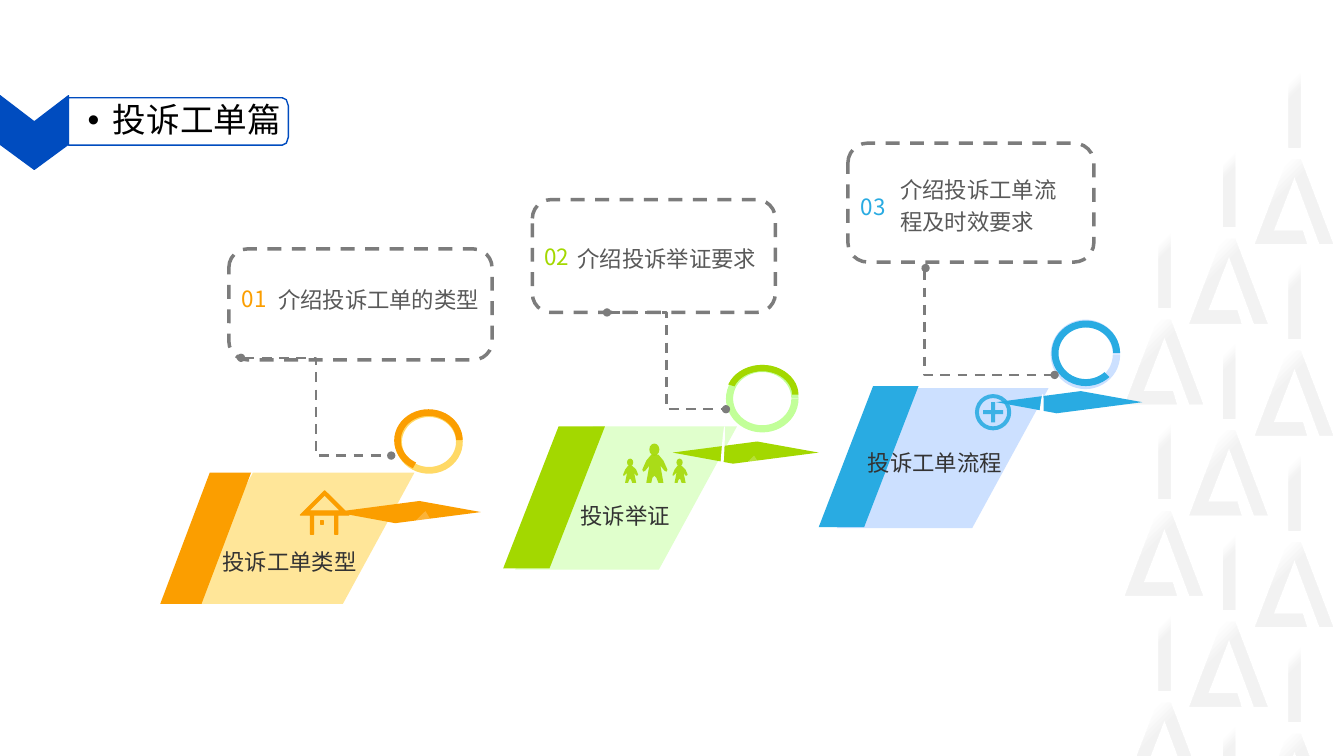
from lxml.etree import SubElement
from pptx import Presentation
from pptx.dml.color import RGBColor
from pptx.enum.dml import MSO_LINE_DASH_STYLE as DASH
from pptx.enum.shapes import MSO_CONNECTOR, MSO_SHAPE as SHAPE
from pptx.enum.text import MSO_ANCHOR
from pptx.oxml.ns import qn
from pptx.util import Pt

PX = 9144
FONT = "Noto Sans CJK SC"
GRAY, NAVY, WHITE = "7C7C7C", "004CBF", "FFFFFF"
ORANGE, GREEN, BLUE = "FB9E00", "A3D800", "29ABE2"
rgb = RGBColor.from_string

presentation = Presentation()
presentation.slide_width = 1333 * PX
presentation.slide_height = 750 * PX
slide = presentation.slides.add_slide(presentation.slide_layouts[6])
shapes = slide.shapes


def paint(shape, color, alpha=100, line=None):
    shape.shadow.inherit = False
    shape.fill.solid()
    shape.fill.fore_color.rgb = rgb(color)
    if alpha < 100:
        tint = shape._element.spPr.find(qn("a:solidFill"))[0]
        SubElement(tint, qn("a:alpha"), val=str(alpha * 1000))
    if line:
        shape.line.color.rgb = rgb(line)
        shape.line.width = Pt(1)
    else:
        shape.line.fill.background()
    return shape


def outline(contours, left=0, top=0, scale=1):
    builder = None
    for contour in contours:
        points = [(left + x * scale, top + y * scale) for x, y in contour]
        if builder is None:
            builder = shapes.build_freeform(*points[0], scale=PX)
        else:
            builder.move_to(*points[0])
        builder.add_line_segments(points[1:], close=True)
    return builder.convert_to_shape()


LETTER = [(45, 0), (32, 0), (0, 84), (51, 84), (47, 71), (18, 71),
          (39, 17), (64, 84), (77, 84)]
for column_left, column_top in [(1116, 222), (1180, 142), (1245, 63)]:
    for row in range(8):
        top = column_top + 95 * row
        if top >= 750:
            continue
        if row % 2:
            motif = outline([LETTER], column_left, top)
        else:
            motif = shapes.add_shape(
                SHAPE.RECTANGLE, (column_left + 33) * PX, top * PX, 12 * PX, 83 * PX)
        motif.shadow.inherit = False
        motif.line.fill.background()
        motif.fill.gradient()
        motif.fill.gradient_angle = 315
        for stop, position, color in zip(
                motif.fill.gradient_stops, (0.2, 0.4), (WHITE, "F2F2F2")):
            stop.position = position
            stop.color.rgb = rgb(color)

DIAMOND = [(0, 0), (84, -11), (145, 0), (60, 11)]
topics = [
    dict(color=ORANGE, pale="FFE699", track="FFD966", number="01",
         caption="介绍投诉工单的类型", label="投诉工单类型",
         tile=(180, 469, 231, 130), strip=(159, 469, 90, 130), diamond=(332, 508),
         ring=(392, 407, 67, 63), arc=(391, 406, 68, 62), start=71.6,
         frame=(227, 247, 261, 110), number_box=(230, 259, 56, 74),
         caption_box=(266, 262, 224, 66), label_box=(211, 534, 189, 46),
         link=(239, 355, 388, 452), bend=0.5),
    dict(color=GREEN, pale="E0FFCC", track="C2FF99", number="02",
         caption="介绍投诉举证要求", label="投诉举证",
         tile=(511, 423, 220, 142), strip=(499, 423, 101, 141), diamond=(667, 449),
         ring=(720, 362, 72, 67), arc=(720, 362, 72, 60), start=118.46,
         frame=(528, 198, 241, 112), number_box=(530, 230, 50, 49),
         caption_box=(563, 224, 218, 59), label_box=(566, 499, 160, 25),
         link=(602, 310, 720, 406), bend=0.5),
    dict(color=BLUE, pale="CCE0FF", track="CCE0FF", number="03",
         caption="介绍投诉工单流程及时效要求", label="投诉工单流程",
         tile=(830, 385, 210, 139), strip=(812, 383, 99, 140), diamond=(988, 399),
         ring=(1042, 317, 69, 69), arc=(1043, 318, 68, 65), start=27.19,
         frame=(841, 142, 244, 118), number_box=(844, 169, 73, 72),
         caption_box=(883, 153, 178, 97), label_box=(851, 440, 164, 38),
         link=(918, 266, 1046, 372), bend=-0.01),
]

for topic in topics:
    for part, color in [("tile", topic["pale"]), ("strip", topic["color"])]:
        slab = shapes.add_shape(SHAPE.PARALLELOGRAM, *[n * PX for n in topic[part]])
        slab.adjustments[0] = 0.545
        paint(slab, color)
    paint(outline([DIAMOND], *topic["diamond"]), topic["color"])
    for part, color, start in [("ring", topic["track"], 0),
                               ("arc", topic["color"], topic["start"])]:
        arc = shapes.add_shape(SHAPE.BLOCK_ARC, *[n * PX for n in topic[part]])
        for index, value in enumerate((start, 215.55, 0.106)):
            arc.adjustments[index] = value
        paint(arc, color)

    frame = shapes.add_shape(SHAPE.ROUNDED_RECTANGLE, *[n * PX for n in topic["frame"]])
    frame.shadow.inherit = False
    frame.fill.background()
    frame.line.color.rgb = rgb(GRAY)
    frame.line.width = Pt(2.5)
    frame.line.dash_style = DASH.DASH

    link = shapes.add_connector(MSO_CONNECTOR.ELBOW, *[n * PX for n in topic["link"]])
    link.line.color.rgb = rgb(GRAY)
    link.line.width = Pt(1.75)
    link.line.dash_style = DASH.DASH
    properties = link._element.spPr
    line = properties.find(qn("a:ln"))
    for end in ("a:headEnd", "a:tailEnd"):
        SubElement(line, qn(end), type="oval")
    SubElement(properties, qn("a:effectLst"))
    guides = properties.find(qn("a:prstGeom")).find(qn("a:avLst"))
    SubElement(guides, qn("a:gd"), name="adj1", fmla=f"val {round(topic['bend'] * 100000)}")

HOUSE = [
    [(321, 517), (318, 517), (318, 520), (321, 520)],
    [(306, 507), (322, 491), (338, 507)],
    [(322, 487), (298, 511), (308, 511), (308, 530), (311, 530), (311, 511),
     (332, 511), (332, 530), (335, 530), (335, 511), (346, 511)],
]
paint(outline(HOUSE), ORANGE, line=ORANGE)

BODY = [(-3, 11), (-8, 17), (-12, 26), (-11, 28), (-9, 27), (-5, 22), (-8, 39),
        (-3, 39), (-2, 34), (0, 32), (2, 34), (4, 39), (9, 39), (6, 22), (10, 27),
        (12, 28), (13, 26), (9, 17), (4, 11)]
for center, top, scale in [(625, 455, 0.62), (674, 455, 0.62), (649, 440, 1)]:
    paint(outline([BODY], center, top, scale), GREEN, 88)
    head = [round(n * PX) for n in (center - 5 * scale, top, 10 * scale, 12 * scale)]
    paint(shapes.add_shape(SHAPE.OVAL, *head), GREEN, 88)

for kind, place, thickness in [(SHAPE.DONUT, (967, 391, 36, 36), 0.11),
                               (SHAPE.CROSS, (975, 399, 20, 20), 0.4)]:
    badge = shapes.add_shape(kind, *[n * PX for n in place])
    badge.adjustments[0] = thickness
    paint(badge, BLUE, 88)

for place in [(450, 439, 117, 5), (677, 460, 78, 3), (982, 437, 98, 5)]:
    glint = shapes.add_shape(SHAPE.OVAL, *[n * PX for n in place])
    glint.rotation = 93.8
    paint(glint, WHITE)

for sheen in [[(700, 532), (762, 474), (748, 452), (676, 523)],
              [(374, 582), (434, 527), (422, 507), (353, 575)],
              [(1041, 488), (1105, 432), (1095, 416), (1021, 484)]]:
    paint(outline([sheen]), WHITE, 22)

CHEVRON = [(68, 95), (68, 143), (34, 168), (0, 143), (0, 95), (34, 121)]
paint(outline([CHEVRON]), NAVY, line=NAVY)
TITLE = [(68, 97), (280, 97), (284, 99), (286, 105), (286, 136), (284, 142),
         (280, 144), (68, 144)]
title = paint(outline([TITLE]), WHITE, 90, NAVY)
title_frame = title.text_frame
title_frame.margin_left = 19 * PX
title_frame.margin_top = title_frame.margin_right = title_frame.margin_bottom = 6 * PX
indent = title_frame.paragraphs[0]._p.get_or_add_pPr()
indent.set("marL", str(25 * PX))
indent.set("indent", str(-25 * PX))
indent.set("algn", "l")
SubElement(indent, qn("a:buFont"), typeface="Arial")
SubElement(indent, qn("a:buChar"), char="•")

texts = [(title_frame, "投诉工单篇", 24, "000000", 0.9)]
for topic in topics:
    for part, color, spacing in [("number", topic["color"], 1),
                                 ("caption", "595959", 1.2), ("label", "333333", 1)]:
        box = shapes.add_textbox(*[n * PX for n in topic[part + "_box"]])
        texts.append((box.text_frame, topic[part], 16, color, spacing))

for text_frame, text, size, color, spacing in texts:
    text_frame.word_wrap = True
    text_frame.vertical_anchor = MSO_ANCHOR.MIDDLE
    paragraph = text_frame.paragraphs[0]
    paragraph.add_run().text = text
    paragraph.line_spacing = spacing
    font = paragraph.font
    font.size = Pt(size)
    font.name = FONT
    font.color.rgb = rgb(color)
    SubElement(font._rPr, qn("a:ea"), typeface=FONT)

presentation.save("out.pptx")
